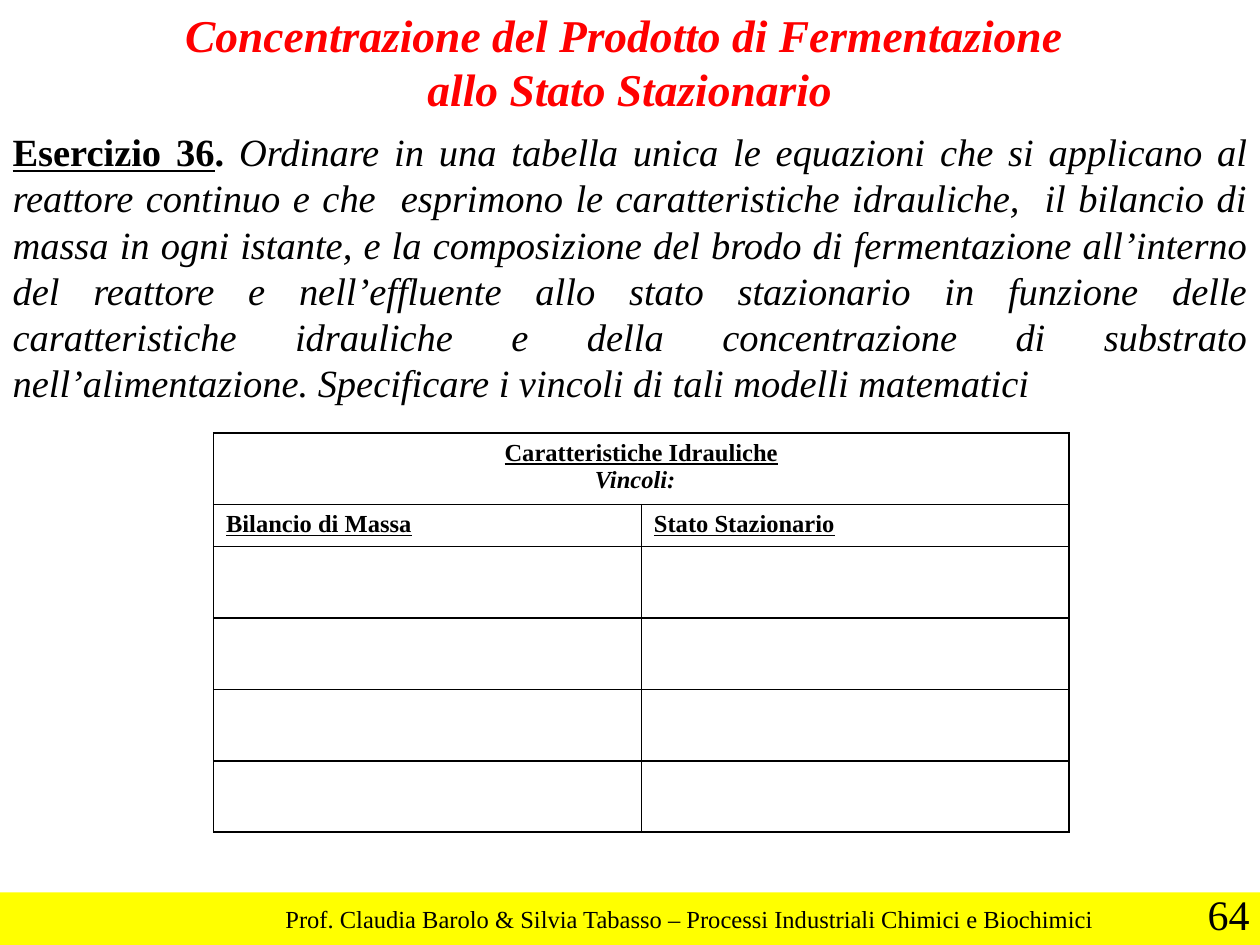
from lxml.etree import SubElement
from pptx import Presentation
from pptx.dml.color import RGBColor
from pptx.enum.shapes import MSO_SHAPE
from pptx.enum.text import MSO_ANCHOR as ANCHOR, MSO_AUTO_SIZE as FIT, PP_ALIGN as ALIGN
from pptx.oxml.ns import qn
from pptx.util import Pt

COLORS = {"title": "FF0000", "text": "000000", "bar": "FFFF00", "border": "000000"}
HEADING = ["Concentrazione del Prodotto di Fermentazione ", "allo Stato Stazionario"]
EXERCISE = (
    " Ordinare in una tabella unica le equazioni che si applicano al reattore continuo"
    " e che  esprimono le caratteristiche idrauliche,  il bilancio di massa in ogni istante,"
    " e la composizione del brodo di fermentazione all’interno del reattore e nell’effluente"
    " allo stato stazionario in funzione delle caratteristiche idrauliche e della"
    " concentrazione di substrato nell’alimentazione. Specificare i vincoli di tali modelli"
    " matematici "
)
FOOTER = "Prof. Claudia Barolo & Silvia Tabasso – Processi Industriali Chimici e Biochimici"


def add_run(p, text, size=14, color="text", bold=False, italic=False, underline=False):
    """Append a formatted run to a paragraph."""
    r = p.add_run()
    r.text = text
    font = r.font
    font.name, font.size = "Times New Roman", Pt(size)
    font.bold, font.italic, font.underline = bold, italic, underline
    font.color.rgb = RGBColor.from_string(COLORS[color])


class SlideBuilder:
    """Hold the style and the current slide."""

    def __init__(self, slide, border=1):
        self.slide, self.border = slide, border

    def bar(self, *box):
        """Add a plain coloured bar."""
        sp = self.slide.shapes.add_shape(MSO_SHAPE.RECTANGLE, *map(Pt, box))
        sp.shadow.inherit = False
        sp.fill.solid()
        sp.fill.fore_color.rgb = RGBColor.from_string(COLORS["bar"])
        sp.line.fill.background()

    def label(self, text, *box, **fmt):
        """Add a single-line text box without a right inset."""
        tf = self.slide.shapes.add_textbox(*map(Pt, box)).text_frame
        tf.word_wrap, tf.margin_right = False, 0
        add_run(tf.paragraphs[0], text, **fmt)

    def title(self, lines, lead, body, *box):
        """Fill the title placeholder with the heading and the exercise."""
        sp = self.slide.shapes.title
        sp.left, sp.top, sp.width, sp.height = map(Pt, box)
        tf = sp.text_frame
        tf.word_wrap, tf.auto_size, tf.vertical_anchor = True, FIT.NONE, ANCHOR.MIDDLE
        for i, line in enumerate(lines):
            p = tf.add_paragraph() if i else tf.paragraphs[0]
            p.alignment = ALIGN.CENTER
            add_run(p, line, size=26, color="title", bold=True, italic=True)
        p = tf.add_paragraph()
        p.alignment, p.space_before = ALIGN.JUSTIFY, Pt(7)
        add_run(p, lead, size=22, bold=True, underline=True)
        add_run(p, ".", size=22, bold=True)
        add_run(p, body, size=22, italic=True)

    def frame_cell(self, cell):
        """Draw the four borders of an unfilled cell."""
        props = cell._tc.get_or_add_tcPr()
        for side in ("lnL", "lnR", "lnT", "lnB"):
            ln = SubElement(props, qn(f"a:{side}"), w=str(Pt(self.border)))
            fill = SubElement(ln, qn("a:solidFill"))
            SubElement(fill, qn("a:srgbClr"), val=COLORS["border"])
        cell.fill.background()

    def table(self, heading, note, columns, left, top, width, heights):
        """Add a table with a merged heading row above the column names."""
        frame = self.slide.shapes.add_table(
            len(heights), len(columns), Pt(left), Pt(top), Pt(width), Pt(sum(heights)))
        table = frame.table
        table.first_row = table.horz_banding = False
        for row, height in zip(table.rows, heights):
            row.height = Pt(height)
        for cell in table.iter_cells():
            self.frame_cell(cell)
        first = table.cell(0, 0)
        first.merge(table.cell(0, len(columns) - 1))
        tf = first.text_frame
        p = tf.paragraphs[0]
        p.alignment = ALIGN.CENTER
        add_run(p, heading, bold=True, underline=True)
        p = tf.add_paragraph()
        p.alignment = ALIGN.CENTER
        add_run(p, note, bold=True, italic=True)
        for i, name in enumerate(columns):
            add_run(table.cell(1, i).text_frame.paragraphs[0], name, bold=True, underline=True)


def main():
    """Build the slide and save it."""
    prs = Presentation()
    prs.slide_width, prs.slide_height = Pt(720), Pt(540)
    s = SlideBuilder(prs.slides.add_slide(prs.slide_layouts[5]))
    s.bar(0, 510, 720, 30)
    s.label(FOOTER, 156, 513, 483, 24)
    s.label("64", 683, 504, 37, 36, size=24)
    s.title(HEADING, "Esercizio 36", EXERCISE, 0, 0, 720, 235.5)
    s.table("Caratteristiche Idrauliche", "Vincoli:  ", ["Bilancio di Massa", "Stato Stazionario"],
            122, 247.5, 489, [40.8, 24] + [40.8] * 4)
    prs.save("out.pptx")


if __name__ == "__main__":
    main()
